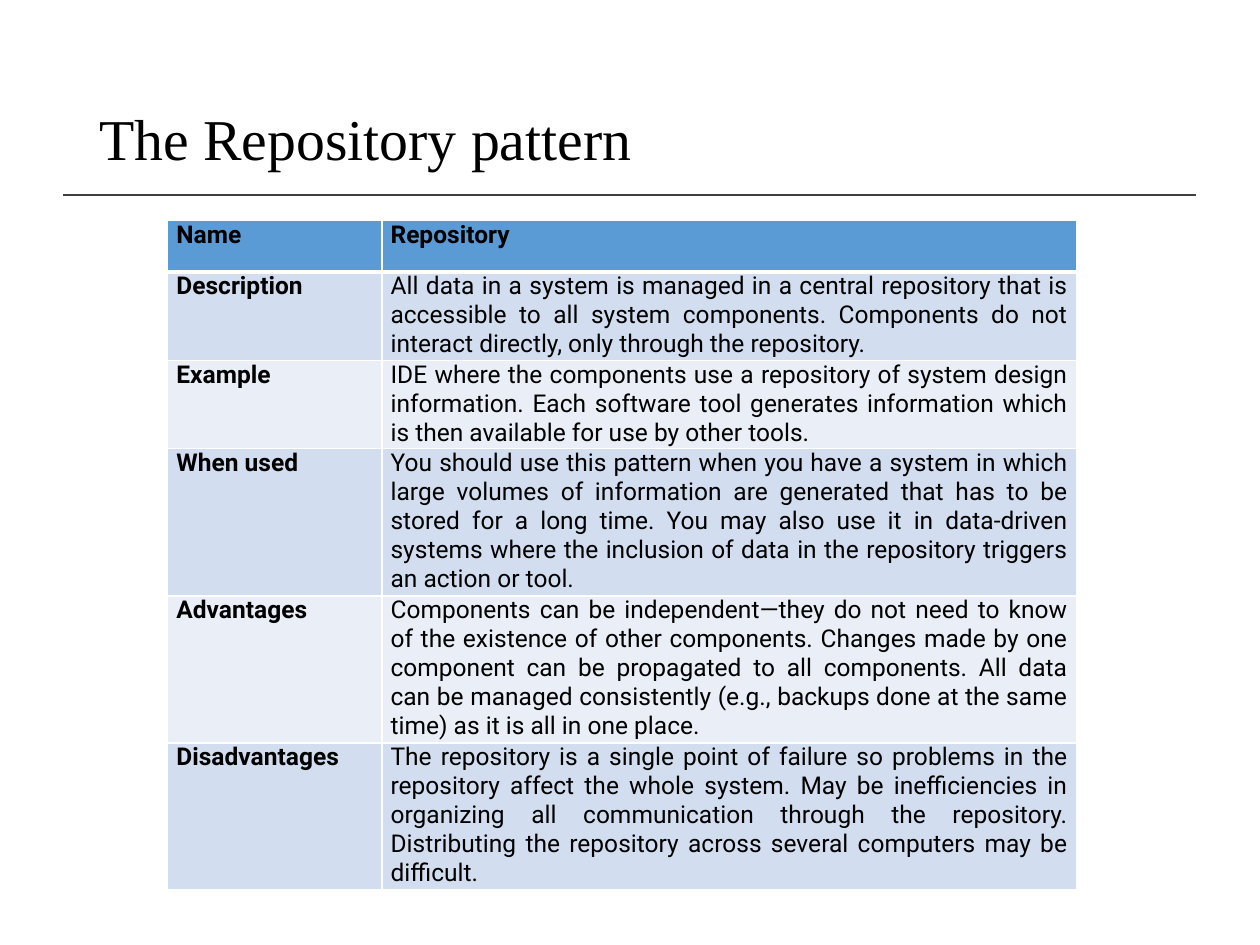
"""Build a slide that summarises the Repository architecture pattern in a table."""
import pptx
import pptx.dml.color
import pptx.enum.shapes
import pptx.enum.text
import pptx.oxml
import pptx.oxml.ns
import pptx.util
from lxml import etree

Pt = pptx.util.Pt
ALIGN = pptx.enum.text.PP_ALIGN
ANCHOR = pptx.enum.text.MSO_ANCHOR

TITLE = "The Repository pattern"
ROWS = [
    ("Name", "Repository", 29.5),
    ("Description", "All data in a system is managed in a central repository that is accessible to all system components. Components do not interact directly, only through the repository.", 49.5),
    ("Example", "IDE where the components use a repository of system design information. Each software tool generates information which is then available for use by other tools.", 49.5),
    ("When used", "You should use this pattern when you have a system in which large volumes of information are generated that has to be stored for a long time. You may also use it in data-driven systems where the inclusion of data in the repository triggers an action or tool.", 82.5),
    ("Advantages", "Components can be independent—they do not need to know of the existence of other components. Changes made by one component can be propagated to all components. All data can be managed consistently (e.g., backups done at the same time) as it is all in one place.", 82.5),
    ("Disadvantages", "The repository is a single point of failure so problems in the repository affect the whole system. May be inefficiencies in organizing all communication through the repository. Distributing the repository across several computers may be difficult.", 82.5),
]
COLUMNS = (122.4, 397)
THEME = {
    "title_font": "Times New Roman", "title_size": 33,
    "body_font": "Roboto", "body_size": 14,
    "text": "000000", "rule": "404040", "border": "FFFFFF",
    "header": "5B9BD5", "bands": ("D2DEEF", "EAEFF7"),
}


def rgb(value):
    """Turn a hex string into a colour."""
    return pptx.dml.color.RGBColor.from_string(value)


def write(frame, text, font, size, bold=False, align=ALIGN.LEFT, spacing=1.0):
    """Put one formatted paragraph in a text frame."""
    para = frame.paragraphs[0]
    para.alignment = align
    para.line_spacing = spacing
    span = para.add_run()
    span.text = text
    span.font.name = font
    span.font.size = Pt(size)
    span.font.bold = bold
    span.font.color.rgb = rgb(THEME["text"])


def add_border(cell, side, width):
    """Draw one solid border on a cell."""
    properties = cell._tc.get_or_add_tcPr()
    line = etree.SubElement(properties, pptx.oxml.ns.qn(f"a:ln{side}"), w=str(Pt(width)))
    fill = etree.SubElement(line, pptx.oxml.ns.qn("a:solidFill"))
    etree.SubElement(fill, pptx.oxml.ns.qn("a:srgbClr"), val=THEME["border"])


def add_title(page):
    """Add the heading and the rule below it."""
    rule = page.shapes.add_connector(
        pptx.enum.shapes.MSO_CONNECTOR.STRAIGHT, Pt(36), Pt(111.6), Pt(683.3), Pt(111.6))
    rule.line.color.rgb = rgb(THEME["rule"])
    rule.line.width = Pt(1)
    etree.SubElement(rule._element.spPr, pptx.oxml.ns.qn("a:effectLst"))
    box = page.shapes.add_textbox(Pt(49.7), Pt(28.8), Pt(620.6), Pt(104.4))
    box.text_frame.word_wrap = True
    box.text_frame.vertical_anchor = ANCHOR.MIDDLE
    write(box.text_frame, TITLE, THEME["title_font"], THEME["title_size"], spacing=0.9)


def add_pattern_table(page):
    """Add the table with a header row and banded rows."""
    height = sum(row[2] for row in ROWS)
    table = page.shapes.add_table(
        len(ROWS), len(COLUMNS), Pt(95.8), Pt(126), Pt(sum(COLUMNS)), Pt(height)).table
    table.horz_banding = False
    for column, width in zip(table.columns, COLUMNS):
        column.width = Pt(width)
    for index, (label, text, row_height) in enumerate(ROWS):
        table.rows[index].height = Pt(row_height)
        color = THEME["bands"][(index - 1) % 2] if index else THEME["header"]
        for column, content in enumerate((label, text)):
            cell = table.cell(index, column)
            cell.margin_left = cell.margin_right = Pt(5)
            cell.margin_top = cell.margin_bottom = Pt(0)
            for side in "LRTB":
                thick = (index, side) in ((0, "B"), (1, "T"))
                add_border(cell, side, 3 if thick else 1)
            cell.fill.solid()
            cell.fill.fore_color.rgb = rgb(color)
            write(cell.text_frame, content, THEME["body_font"], THEME["body_size"],
                  bold=index == 0 or column == 0, align=ALIGN.JUSTIFY)


def main():
    """Create the deck and save it."""
    deck = pptx.Presentation()
    deck.slide_width, deck.slide_height = Pt(720), Pt(540)
    page = deck.slides.add_slide(deck.slide_layouts[6])
    add_title(page)
    add_pattern_table(page)
    deck.save("out.pptx")


if __name__ == "__main__":
    main()
